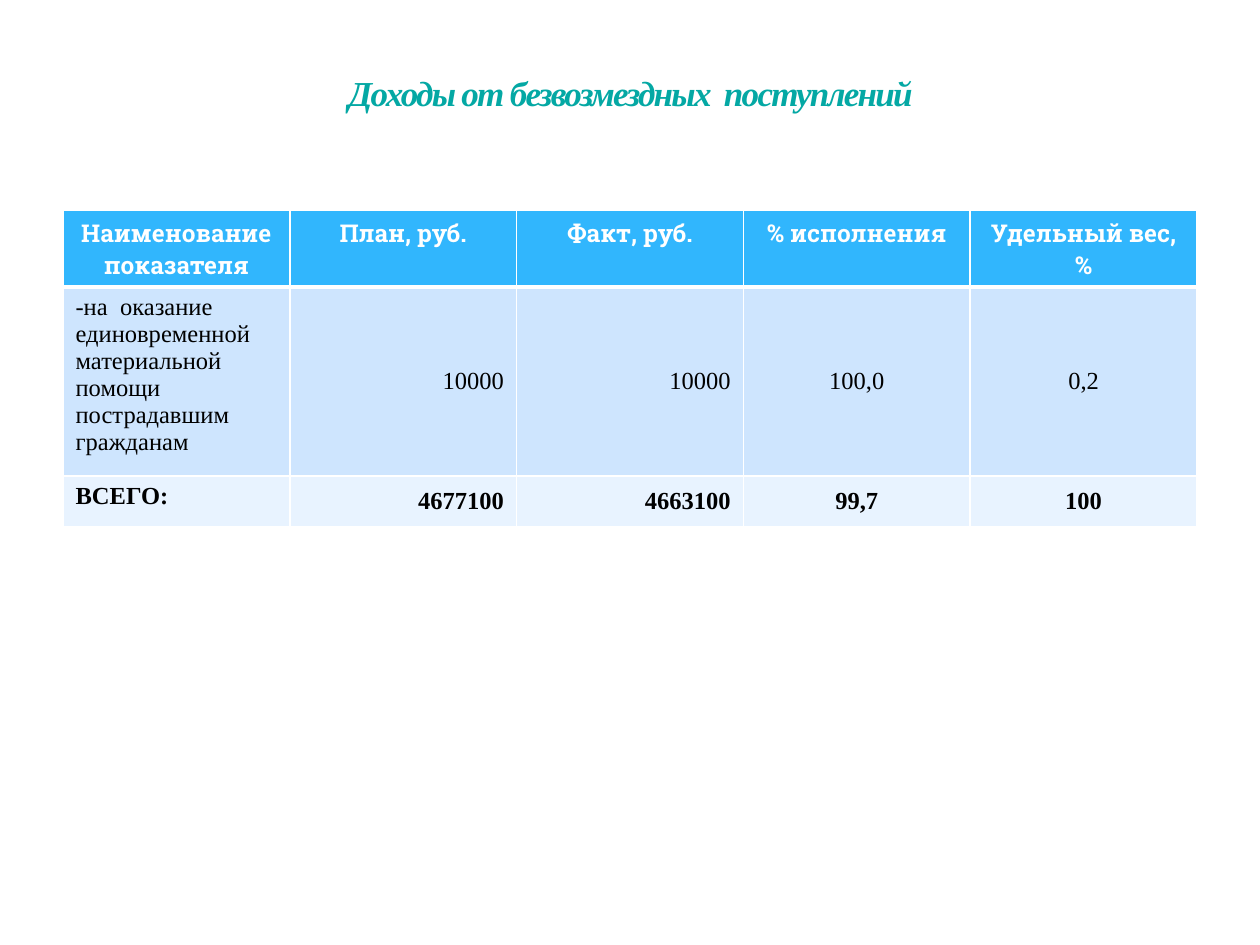
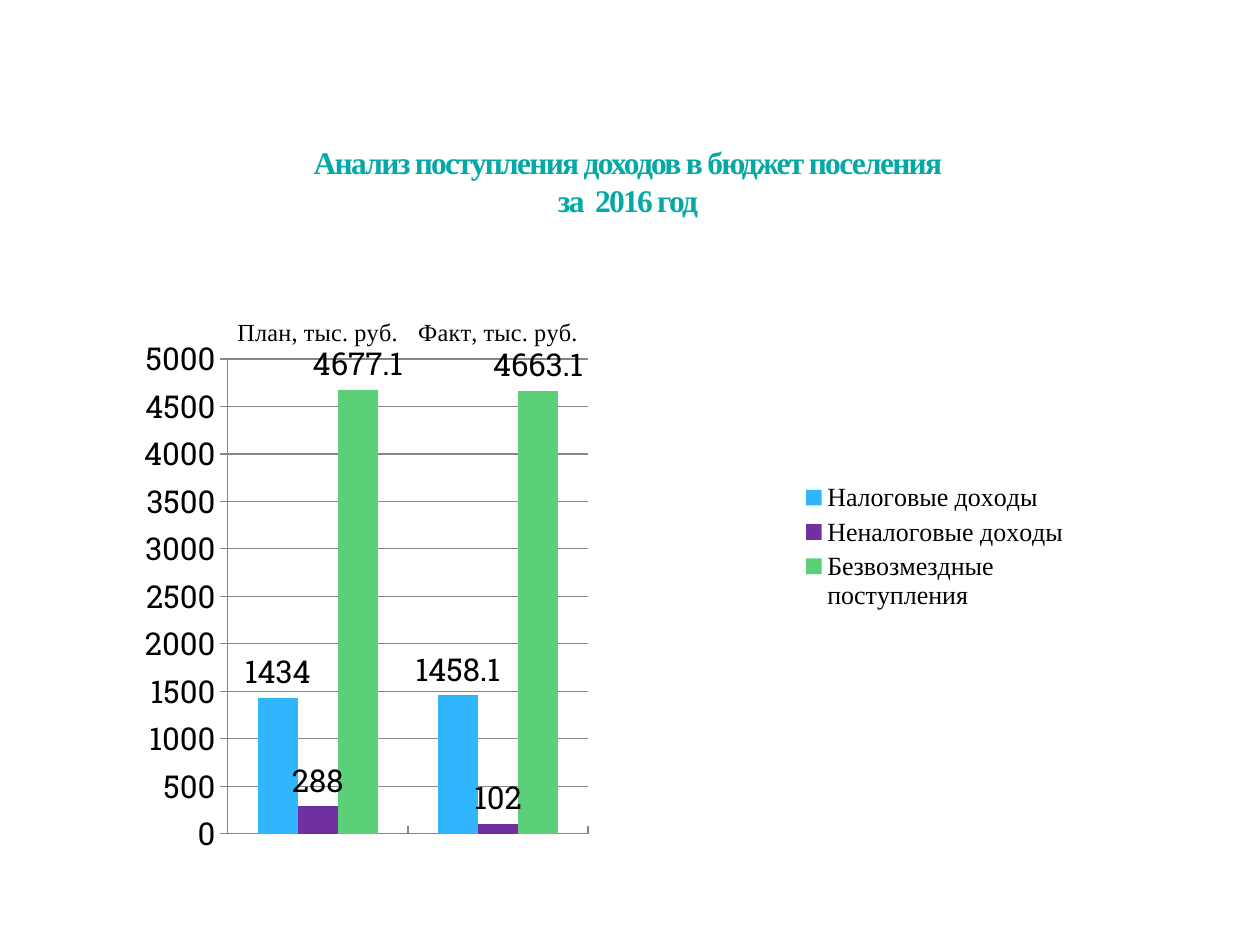
from lxml import etree
from pptx import Presentation
from pptx.chart.data import CategoryChartData
from pptx.dml.color import RGBColor
from pptx.enum.chart import (XL_CHART_TYPE, XL_LABEL_POSITION, XL_LEGEND_POSITION,
                             XL_TICK_LABEL_POSITION, XL_TICK_MARK)
from pptx.enum.text import MSO_ANCHOR, PP_ALIGN
from pptx.oxml import parse_xml
from pptx.oxml.ns import nsdecls, qn
from pptx.util import Pt

LEFT, CENTER, RIGHT = PP_ALIGN.LEFT, PP_ALIGN.CENTER, PP_ALIGN.RIGHT
TOP, MIDDLE = MSO_ANCHOR.TOP, MSO_ANCHOR.MIDDLE
COLUMNS = XL_CHART_TYPE.COLUMN_CLUSTERED
LABEL_ABOVE = XL_LABEL_POSITION.OUTSIDE_END
LEGEND_RIGHT = XL_LEGEND_POSITION.RIGHT
LABELS_HIGH = XL_TICK_LABEL_POSITION.HIGH
TICK_IN, TICK_OUT = XL_TICK_MARK.INSIDE, XL_TICK_MARK.OUTSIDE

TEAL = RGBColor(0x04, 0xA8, 0xA4)
TITLE_EDGE = RGBColor(0xAF, 0xCC, 0xDE)
WHITE = RGBColor(0xFF, 0xFF, 0xFF)
BLACK = RGBColor(0, 0, 0)
GRAY = RGBColor(0x86, 0x86, 0x86)
BLUE = RGBColor(0x31, 0xB6, 0xFD)
PURPLE = RGBColor(0x70, 0x30, 0xA0)
GREEN = RGBColor(0x5B, 0xD0, 0x78)
BAND_DARK = RGBColor(0xCE, 0xE5, 0xFE)
BAND_LIGHT = RGBColor(0xE8, 0xF3, 0xFF)

SERIF, SLAB = "Times New Roman", "Roboto Slab"


def px(length):
    """Turn px (126 to the inch) into EMU."""
    return round(length * 914400 / 126)


def set_font(font, name, size, color, bold=False, italic=False):
    font.name, font.size = name, Pt(size)
    font.bold, font.italic = bold, italic
    font.color.rgb = color


def set_layout(parent, x, y, w, h, inner=False):
    """Give a chart part a fixed place, as shares of the chart."""
    for old in parent.findall(qn("c:layout")):
        parent.remove(old)
    target = '<c:layoutTarget val="inner"/>' if inner else ""
    modes = "".join(f'<c:{axis}Mode val="edge"/>' for axis in "xy")
    sizes = "".join(f'<c:{key} val="{value}"/>' for key, value in zip("xywh", (x, y, w, h)))
    return parse_xml(f'<c:layout {nsdecls("c")}><c:manualLayout>{target}{modes}{sizes}'
                     '</c:manualLayout></c:layout>')


class Report:
    def __init__(self):
        self.deck = Presentation()
        self.deck.slide_width, self.deck.slide_height = px(1260), px(945)
        self.page = None

    def new_page(self):
        self.page = self.deck.slides.add_slide(self.deck.slide_layouts[6])

    def title(self, text, place, size, italic=False, margins=(6, 6)):
        box = self.page.shapes.add_textbox(*map(px, place))
        frame = box.text_frame
        frame.word_wrap, frame.vertical_anchor = True, MIDDLE
        frame.margin_top, frame.margin_bottom = map(px, margins)
        para = frame.paragraphs[0]
        para.text, para.alignment = text, CENTER
        set_font(para.font, SERIF, size, TEAL, True, italic)
        # Tight letters with a thin pale edge
        for span in para.runs:
            props = span._r.get_or_add_rPr()
            props.set("spc", "-100")
            props.insert(0, parse_xml(
                f'<a:ln {nsdecls("a")} w="3175"><a:solidFill><a:srgbClr val="{TITLE_EDGE}">'
                '<a:alpha val="25000"/></a:srgbClr></a:solidFill></a:ln>'))

    def cell_borders(self, cell, widths):
        props = cell._tc.get_or_add_tcPr()
        for side, width in zip("LRTB", widths):
            line = etree.SubElement(props, qn(f"a:ln{side}"), w=str(Pt(width)))
            fill = etree.SubElement(line, qn("a:solidFill"))
            etree.SubElement(fill, qn("a:srgbClr"), val=str(WHITE))

    def table(self, rows, place, heights):
        grid = self.page.shapes.add_table(len(rows), len(rows[0]), *map(px, place)).table
        fills = (BLUE, BAND_DARK, BAND_LIGHT)
        body_aligns = (LEFT, RIGHT, RIGHT, CENTER, CENTER)
        for r, (texts, height) in enumerate(zip(rows, heights)):
            grid.rows[r].height = px(height)
            header, total = r == 0, r == len(rows) - 1
            for c, text in enumerate(texts):
                cell = grid.cell(r, c)
                cell.text = text
                cell.vertical_anchor = TOP if header or c == 0 else MIDDLE
                para = cell.text_frame.paragraphs[0]
                para.alignment = CENTER if header else body_aligns[c]
                set_font(para.font, SLAB if header else SERIF, 14,
                         WHITE if header else BLACK, header or total)
                self.cell_borders(cell, (1, 1, 3 if r == 1 else 1, 3 if header else 1))
                cell.fill.solid()
                cell.fill.fore_color.rgb = fills[r]

    def column_chart(self, categories, series, place):
        data = CategoryChartData()
        data.categories = categories
        for name, values, _ in series:
            data.add_series(name, values)
        chart = self.page.shapes.add_chart(COLUMNS, *map(px, place), data).chart
        chart.has_title = False
        set_font(chart.font, SLAB, 18, BLACK)

        # Columns and their labels
        plot = chart.plots[0]
        plot.gap_width, plot.vary_by_categories = 150, False
        plot.has_data_labels = True
        plot.data_labels.show_value = True
        plot.data_labels.position = LABEL_ABOVE
        for bars, (_, _, color) in zip(plot.series, series):
            bars.format.fill.solid()
            bars.format.fill.fore_color.rgb = color

        # Axes
        names, values = chart.category_axis, chart.value_axis
        names.major_tick_mark, values.major_tick_mark = TICK_IN, TICK_OUT
        names.tick_label_position = LABELS_HIGH
        set_font(names.tick_labels.font, SERIF, 14, BLACK)
        values.minimum_scale, values.maximum_scale, values.major_unit = 0, 5000, 500
        values.has_major_gridlines = True
        for line in (names.format.line, values.format.line, values.major_gridlines.format.line):
            line.color.rgb, line.width = GRAY, Pt(0.75)

        # Legend and fixed places
        chart.has_legend = True
        legend = chart.legend
        legend.position, legend.include_in_layout = LEGEND_RIGHT, False
        set_font(legend.font, SERIF, 15, BLACK)
        area, key = plot._element.getparent(), legend._element
        area.insert(0, set_layout(area, 0.08, 0.2, 0.39, 0.76, inner=True))
        key_layout = set_layout(key, 0.7, 0.39, 0.29, 0.22)
        key.find(qn("c:legendPos")).addnext(key_layout)


def main():
    report = Report()

    # Grants received
    report.new_page()
    report.title("Доходы от безвозмездных  поступлений", (144, 0, 973, 185), 20, italic=True)
    report.table([
        ("Наименование показателя", "План, руб.", "Факт, руб.", "% исполнения",
         "Удельный вес, %"),
        ("-на  оказание единовременной материальной помощи пострадавшим гражданам",
         "10000", "10000", "100,0", "0,2"),
        ("ВСЕГО:", "4677100", "4663100", "99,7", "100"),
    ], (63, 210, 1134, 303), (77, 175, 51))

    # Income by kind, plan against fact
    report.new_page()
    report.column_chart(("План, тыс. руб.", "Факт, тыс. руб."), [
        ("Налоговые доходы", (1434, 1458.1), BLUE),
        ("Неналоговые доходы", (288, 102), PURPLE),
        ("Безвозмездные поступления", (4677.1, 4663.1), GREEN),
    ], (144, 234, 934, 625))
    report.title("Анализ поступления доходов в бюджет поселения\vза  2016 год",
                 (144, 141, 968, 112), 18, margins=(0, 32))

    report.deck.save("out.pptx")


if __name__ == "__main__":
    main()
